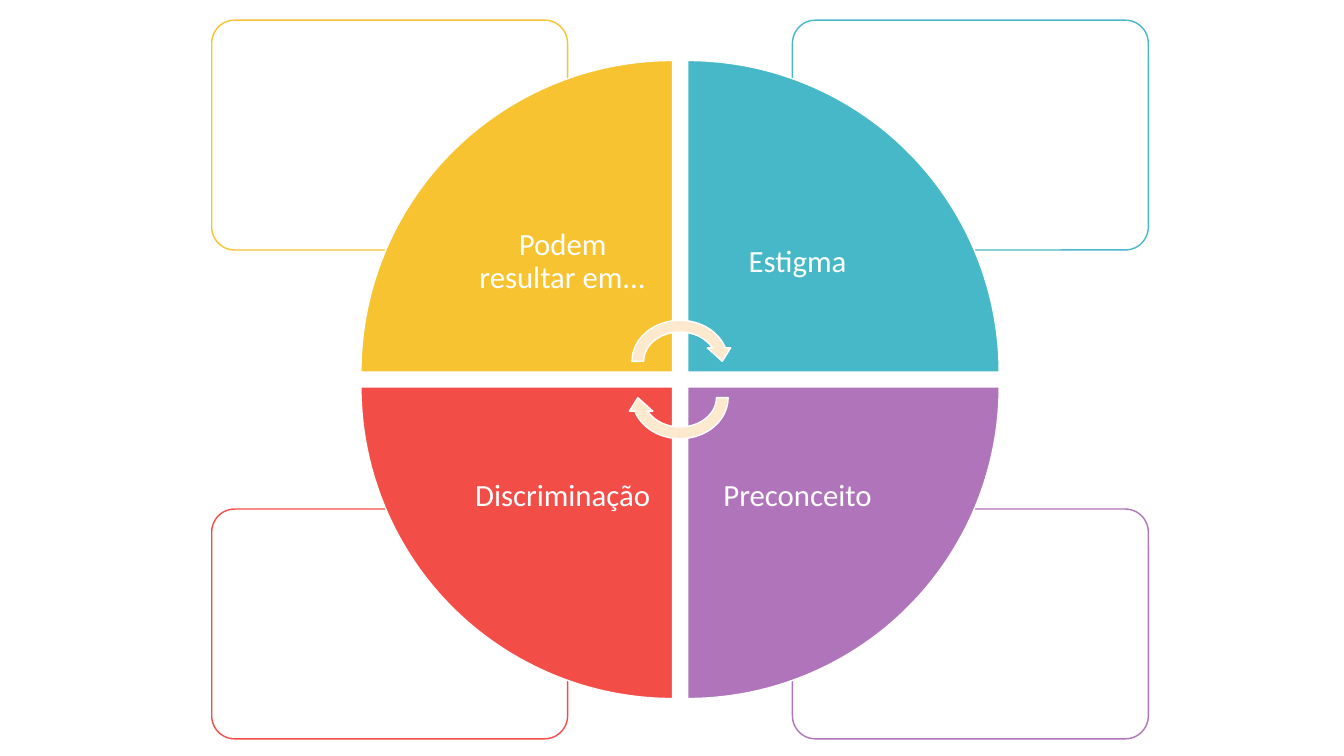
from pptx import Presentation, util as u
from pptx.dml.color import RGBColor
from pptx.enum import shapes, text
from pptx.oxml.ns import qn
from lxml import etree

WHITE = RGBColor(0xFF, 0xFF, 0xFF)
YELLOW = RGBColor(0xF7, 0xC3, 0x31)
TEAL = RGBColor(0x47, 0xB8, 0xC7)
PURPLE = RGBColor(0xB0, 0x74, 0xBA)
RED = RGBColor(0xF3, 0x4D, 0x47)
CREAM = RGBColor(0xFC, 0xE9, 0xCE)

COLUMNS, ROWS = 133.3, 75
CENTER_COLUMN, CENTER_ROW = 67.45, 37.65
GAP = 1.5
WEDGE, LABEL = 30.9, 21.8

QUADRANTS = [
    ("Podem resultar em...", YELLOW, -1, -1, 0),
    ("Estigma", TEAL, 1, -1, 90),
    ("Preconceito", PURPLE, 1, 1, 180),
    ("Discriminação", RED, -1, 1, 270),
]


class CycleSlide:
    font = "Calibri"
    size = u.Pt(22)
    line_width = u.Pt(1)

    def __init__(self, deck):
        self.column = deck.slide_width / COLUMNS
        self.row = deck.slide_height / ROWS
        self.page = deck.slides.add_slide(deck.slide_layouts[6])

    def frame(self, across, down, width, height):
        left = CENTER_COLUMN + across - width / 2
        top = CENTER_ROW + down - height / 2
        return (u.Emu(round(left * self.column)), u.Emu(round(top * self.row)),
                u.Emu(round(width * self.column)), u.Emu(round(height * self.row)))

    def shape(self, kind, across, down, width, height, fill, line, rotation=0):
        shape = self.page.shapes.add_shape(kind, *self.frame(across, down, width, height))
        shape.shadow.inherit = False
        shape.fill.solid()
        shape.fill.fore_color.rgb = fill
        shape.line.color.rgb = line
        shape.line.width = self.line_width
        shape.rotation = rotation
        return shape

    def card(self, color, side, level):
        card = self.shape(shapes.MSO_SHAPE.ROUNDED_RECTANGLE,
                          side * 28.8, level * 24.25, 35.3, 22.8, WHITE, color)
        card.adjustments[0] = 0.1
        tint = card.fill._xPr.find(qn("a:solidFill"))[0]
        etree.SubElement(tint, qn("a:alpha")).set("val", "90000")

    def wedge(self, color, side, level, rotation):
        offset = (WEDGE + GAP) / 2
        self.shape(shapes.MSO_SHAPE.PIE_WEDGE, side * offset, level * offset,
                   WEDGE, WEDGE, color, WHITE, rotation)

    def label(self, words, side, level):
        offset = (LABEL + GAP) / 2
        box = self.page.shapes.add_textbox(
            *self.frame(side * offset, level * offset, LABEL, LABEL))
        frame = box.text_frame
        frame.word_wrap = True
        frame.vertical_anchor = text.MSO_ANCHOR.MIDDLE
        frame.margin_left = frame.margin_right = u.Inches(0.17)
        frame.margin_top = frame.margin_bottom = u.Inches(0.17)
        para = frame.paragraphs[0]
        para.text = words
        para.alignment = text.PP_ALIGN.CENTER
        para.line_spacing = 0.9
        para.font.name = self.font
        para.font.size = self.size
        para.font.color.rgb = WHITE

    def arrow(self, level, rotation):
        self.shape(shapes.MSO_SHAPE.CIRCULAR_ARROW, 0, level * 1.8,
                   10.7, 9.3, CREAM, WHITE, rotation)


def main():
    deck = Presentation()
    deck.slide_width = u.Inches(13.33)
    deck.slide_height = u.Inches(7.5)
    cycle = CycleSlide(deck)
    for words, color, side, level, rotation in QUADRANTS:
        cycle.card(color, side, level)
    for words, color, side, level, rotation in QUADRANTS:
        cycle.wedge(color, side, level, rotation)
        cycle.label(words, side, level)
    cycle.arrow(-1, 0)
    cycle.arrow(1, 180)
    deck.save("out.pptx")


if __name__ == "__main__":
    main()
